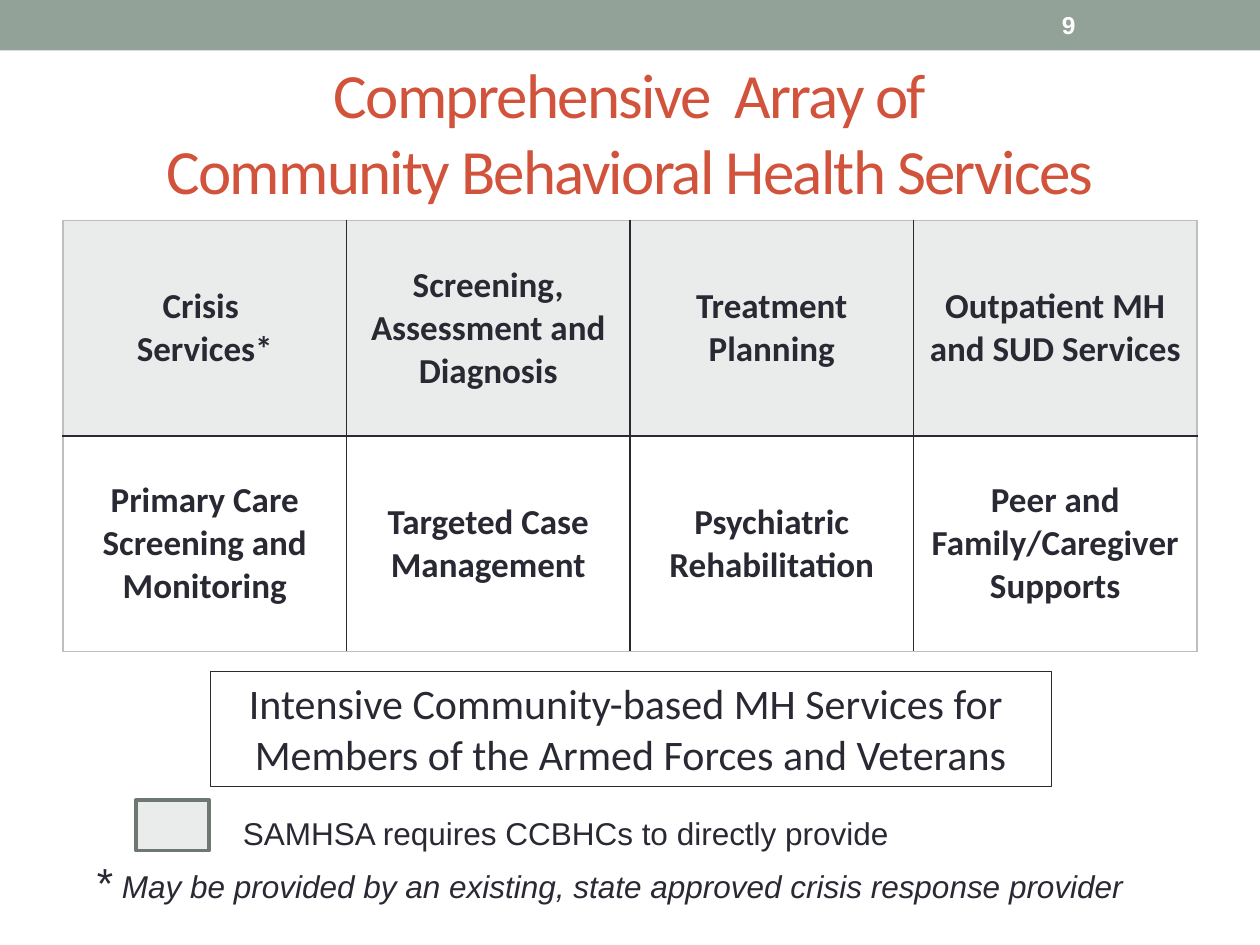
from lxml import etree
from pptx import Presentation
from pptx.dml.color import RGBColor
from pptx.enum.shapes import MSO_SHAPE
from pptx.enum.text import MSO_ANCHOR, MSO_AUTO_SIZE, PP_ALIGN
from pptx.oxml.ns import qn
from pptx.util import Inches, Pt

RECTANGLE = MSO_SHAPE.RECTANGLE
MIDDLE, TOP = MSO_ANCHOR.MIDDLE, MSO_ANCHOR.TOP
CENTER, LEFT = PP_ALIGN.CENTER, PP_ALIGN.LEFT

THEME = {
    "heading": "Calibri", "body": "Arial",
    "ink": "292934", "accent": "D2533C", "band": "93A299", "tint": "E9ECEB",
    "key_line": "6D7871", "frame": "BFBFBF", "white": "FFFFFF",
    "title_size": 36, "box_size": 24, "cell_size": 20, "note_size": 18, "number_size": 14,
}

TITLE = "Comprehensive  Array of\vCommunity Behavioral Health Services"
SERVICES = [
    ["Crisis \nServices*", "Screening, Assessment and Diagnosis",
     "Treatment Planning", "Outpatient MH and SUD Services"],
    ["Primary Care Screening and Monitoring", "Targeted Case Management",
     "Psychiatric Rehabilitation", "Peer and Family/Caregiver Supports"],
]
VETERANS = "Intensive Community-based MH Services for \nMembers of the Armed Forces and Veterans"
KEY = "SAMHSA requires CCBHCs to directly provide"
FOOTNOTE = "May be provided by an existing, state approved crisis response provider"
PAGE_NUMBER = "9"


def color(name):
    return RGBColor.from_string(THEME[name])


def style_text(frame, font, size, ink="ink", align=LEFT, bold=False):
    for paragraph in frame.paragraphs:
        paragraph.alignment = align
        paragraph.font.name = THEME[font]
        paragraph.font.size = Pt(THEME[size])
        paragraph.font.color.rgb = color(ink)
        paragraph.font.bold = bold


def add_rectangle(slide, box, fill=None, line=None, width=0):
    shape = slide.shapes.add_shape(RECTANGLE, *map(Inches, box))
    shape.shadow.inherit = False
    if fill:
        shape.fill.solid()
        shape.fill.fore_color.rgb = color(fill)
    else:
        shape.fill.background()
    if line:
        shape.line.color.rgb = color(line)
        shape.line.width = Pt(width)
    else:
        shape.line.fill.background()
    return shape


def add_text(slide, box, text, size, anchor=TOP, **style):
    frame = slide.shapes.add_textbox(*map(Inches, box)).text_frame
    frame.word_wrap = True
    frame.vertical_anchor = anchor
    frame.text = text
    style_text(frame, "body", size, **style)
    return frame


def set_borders(cell, edges):
    properties = cell._tc.get_or_add_tcPr()
    for index, (tag, name) in enumerate(edges.items()):
        line = etree.Element(qn(f"a:{tag}"), w=str(Pt(1)))
        fill = etree.SubElement(line, qn("a:solidFill"))
        etree.SubElement(fill, qn("a:srgbClr"), val=THEME[name])
        properties.insert(index, line)


def add_title(slide):
    title = slide.shapes.title
    title.left, title.top, title.width, title.height = map(Inches, (0.5, 0.58, 9, 0.92))
    frame = title.text_frame
    frame.text = TITLE
    frame.word_wrap = True
    frame.auto_size = MSO_AUTO_SIZE.NONE
    frame.vertical_anchor = MIDDLE
    style_text(frame, "heading", "title_size", "accent", CENTER)
    for run in frame.paragraphs[0].runs:
        run.font._element.set("spc", "-100")


def add_services(slide):
    rows, columns = len(SERVICES), len(SERVICES[0])
    table = slide.shapes.add_table(rows, columns, *map(Inches, (0.5, 1.75, 9, 3.42))).table
    table.first_row = table.horz_banding = False
    for row, names in enumerate(SERVICES):
        for column, name in enumerate(names):
            cell = table.cell(row, column)
            cell.text = name
            cell.vertical_anchor = MIDDLE
            style_text(cell.text_frame, "heading", "cell_size", align=CENTER, bold=True)
            if row == 0:
                cell.fill.solid()
                cell.fill.fore_color.rgb = color("tint")
            else:
                cell.fill.background()
            set_borders(cell, {
                "lnL": "frame" if column == 0 else "ink",
                "lnR": "frame" if column == columns - 1 else "ink",
                "lnT": "frame" if row == 0 else "ink",
                "lnB": "frame" if row == rows - 1 else "ink",
            })


def add_footnote(slide):
    frame = add_text(slide, (0.67, 6.75, 8.42, 0.5), "*", "box_size")
    for text, italic in ((" ", False), (FOOTNOTE, True)):
        run = frame.paragraphs[0].add_run()
        run.text = text
        run.font.size = Pt(THEME["note_size"])
        run.font.italic = italic


def main():
    presentation = Presentation()
    presentation.slide_width, presentation.slide_height = Inches(10), Inches(7.5)
    slide = presentation.slides.add_slide(presentation.slide_layouts[5])

    add_rectangle(slide, (0, 0, 10, 0.4), fill="band")
    add_title(slide)
    add_services(slide)

    veterans = add_rectangle(slide, (1.67, 5.33, 6.67, 0.91), line="ink", width=0.25)
    veterans.text_frame.text = VETERANS
    veterans.text_frame.vertical_anchor = TOP
    style_text(veterans.text_frame, "heading", "box_size", align=CENTER)

    add_text(slide, (8.33, 0.02, 1.17, 0.36), PAGE_NUMBER, "number_size",
             anchor=MIDDLE, ink="white", bold=True)
    add_footnote(slide)
    add_text(slide, (1.83, 6.41, 7.42, 0.4), KEY, "note_size")
    add_rectangle(slide, (1.08, 6.35, 0.58, 0.4), fill="tint", line="key_line", width=2.08)
    presentation.save("out.pptx")


if __name__ == "__main__":
    main()
